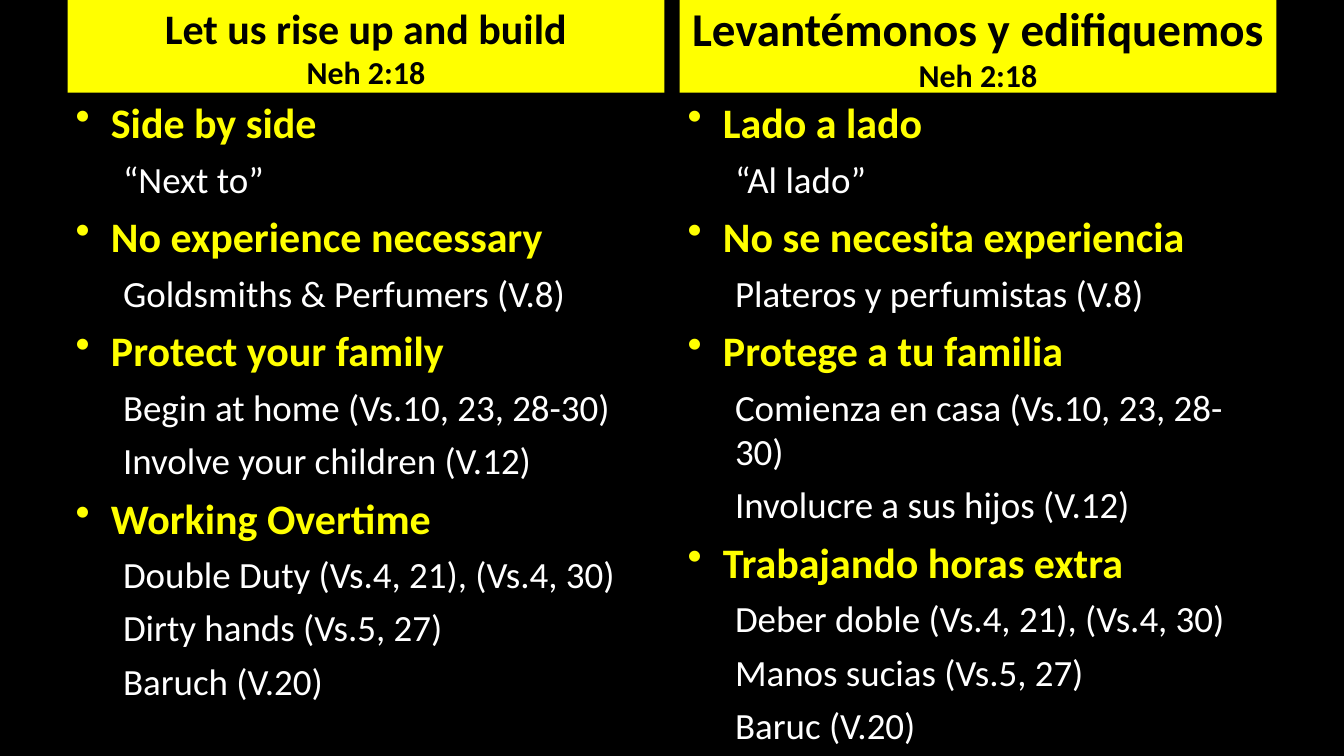
from lxml import etree
from pptx import Presentation
from pptx.dml.color import RGBColor
from pptx.enum import shapes, text
from pptx.oxml import ns
from pptx.util import Inches, Pt

BLACK = RGBColor(0, 0, 0)
WHITE = RGBColor(255, 255, 255)
YELLOW = RGBColor(255, 255, 0)
FONT = "Calibri"

LEFT, COLUMN_STEP = 0.67, 6.07
COLUMN_WIDTH, HEADER_HEIGHT, BODY_HEIGHT = 5.92, 0.92, 6.58
POINT_SIZE, DETAIL_SIZE, REFERENCE_SIZE = 30, 26.4, 22.8
SPACE_RATIO = 0.244  # a fifth of the line height

# Each column: title, title size, header insets, points with their details
COLUMNS = [
    ("Let us rise up and build", 30, (0.08, 0.04), [
        ("Side by side", ["“Next to”"]),
        ("No experience necessary", ["Goldsmiths & Perfumers (V.8)"]),
        ("Protect your family",
         ["Begin at home (Vs.10, 23, 28-30)", "Involve your children (V.12)"]),
        ("Working Overtime",
         ["Double Duty (Vs.4, 21), (Vs.4, 30)", "Dirty hands (Vs.5, 27)", "Baruch (V.20)"]),
    ]),
    ("Levantémonos y edifiquemos", 33.6, (0.09, 0.05), [
        ("Lado a lado", ["“Al lado”"]),
        ("No se necesita experiencia", ["Plateros y perfumistas (V.8)"]),
        ("Protege a tu familia",
         ["Comienza en casa (Vs.10, 23, 28-30)", "Involucre a sus hijos (V.12)"]),
        ("Trabajando horas extra",
         ["Deber doble (Vs.4, 21), (Vs.4, 30)", "Manos sucias (Vs.5, 27)", "Baruc (V.20)"]),
    ]),
]


def set_up_frame(frame, inset_x, inset_y, anchor):
    frame.word_wrap = True
    frame.vertical_anchor = anchor
    frame.margin_left = frame.margin_right = Inches(inset_x)
    frame.margin_top = frame.margin_bottom = Inches(inset_y)


def add_paragraph(frame, words, size, color, bold):
    """Fill the empty first paragraph, or append a new one."""
    first = frame.paragraphs[0]
    para = frame.add_paragraph() if first.runs else first
    para.text = words
    font = para.runs[0].font
    font.name, font.size, font.bold = FONT, Pt(size), bold
    font.color.rgb = color
    return para


def set_indent(para, margin, first_line=0, bullet=None):
    properties = para._p.get_or_add_pPr()
    properties.set("marL", str(Inches(margin)))
    properties.set("indent", str(Inches(first_line)))
    if bullet:
        etree.SubElement(properties, ns.qn("a:buChar"), char=bullet)


def add_header(page, left, title, size, insets):
    box = page.shapes.add_shape(
        shapes.MSO_SHAPE.RECTANGLE, Inches(left), 0,
        Inches(COLUMN_WIDTH), Inches(HEADER_HEIGHT))
    box.shadow.inherit = False
    box.fill.solid()
    box.fill.fore_color.rgb = YELLOW
    box.line.fill.background()
    set_up_frame(box.text_frame, *insets, text.MSO_ANCHOR.MIDDLE)
    for words, points in ((title, size), ("Neh 2:18", REFERENCE_SIZE)):
        para = add_paragraph(box.text_frame, words, points, BLACK, True)
        para.alignment = text.PP_ALIGN.CENTER


def add_outline(page, left, points):
    box = page.shapes.add_textbox(
        Inches(left), Inches(HEADER_HEIGHT), Inches(COLUMN_WIDTH), Inches(BODY_HEIGHT))
    frame = box.text_frame
    set_up_frame(frame, 0.08, 0.04, text.MSO_ANCHOR.TOP)
    for index, (point, details) in enumerate(points):
        para = add_paragraph(frame, point, POINT_SIZE, YELLOW, True)
        set_indent(para, 0.35, -0.35, "•")
        para.space_before = Pt(POINT_SIZE * SPACE_RATIO if index else 0)
        for detail in details:
            para = add_paragraph(frame, detail, DETAIL_SIZE, WHITE, False)
            para.level = 1
            set_indent(para, 0.47)
            para.space_before = Pt(DETAIL_SIZE * SPACE_RATIO)


def main():
    deck = Presentation()
    deck.slide_width, deck.slide_height = Inches(13.33), Inches(7.5)
    page = deck.slides.add_slide(deck.slide_layouts[6])
    page.background.fill.solid()
    page.background.fill.fore_color.rgb = BLACK
    for index, (title, size, insets, points) in enumerate(COLUMNS):
        left = LEFT + index * COLUMN_STEP
        add_header(page, left, title, size, insets)
        add_outline(page, left, points)
    deck.save("out.pptx")


if __name__ == "__main__":
    main()
